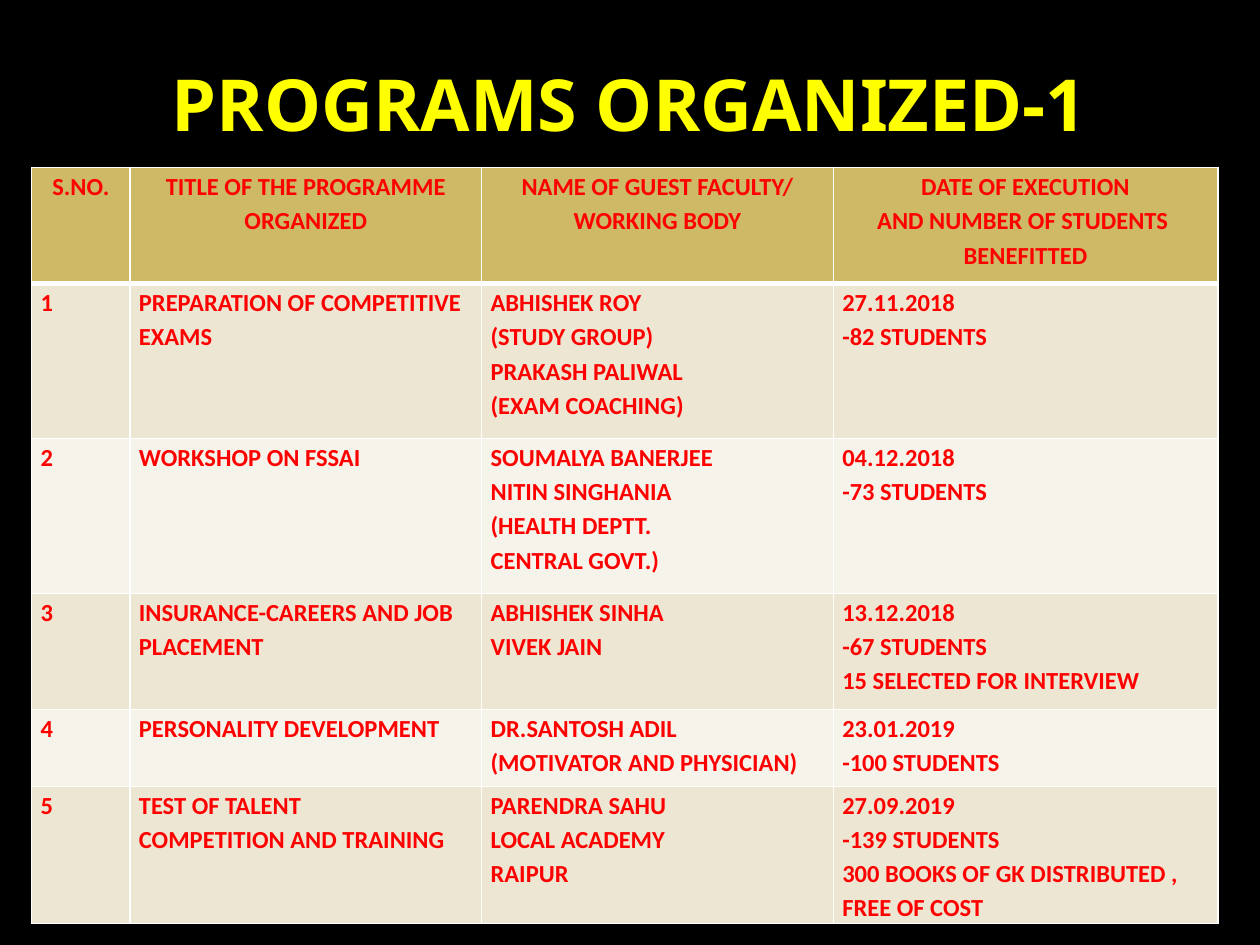
from dataclasses import dataclass

from lxml import etree
from pptx import Presentation, util as u
from pptx.dml.color import RGBColor
from pptx.enum import text
from pptx.oxml import ns

TITLE = "PROGRAMS ORGANIZED-1"
HEADINGS = (
    "S.NO.",
    "TITLE OF THE PROGRAMME ORGANIZED",
    "NAME OF GUEST FACULTY/\nWORKING BODY",
    "DATE OF EXECUTION\nAND NUMBER OF STUDENTS \nBENEFITTED",
)
PROGRAMS = [
    ("PREPARATION OF COMPETITIVE EXAMS",
     "ABHISHEK ROY\n(STUDY GROUP)\nPRAKASH PALIWAL\n(EXAM COACHING)",
     "27.11.2018\n-82 STUDENTS"),
    ("WORKSHOP ON FSSAI",
     "SOUMALYA BANERJEE\nNITIN SINGHANIA\n(HEALTH DEPTT.\nCENTRAL GOVT.)",
     "04.12.2018\n-73 STUDENTS"),
    ("INSURANCE-CAREERS AND JOB PLACEMENT",
     "ABHISHEK SINHA\nVIVEK JAIN",
     "13.12.2018\n-67 STUDENTS\n15 SELECTED FOR INTERVIEW"),
    ("PERSONALITY DEVELOPMENT",
     "DR.SANTOSH ADIL\n(MOTIVATOR AND PHYSICIAN)",
     "23.01.2019\n-100 STUDENTS"),
    ("TEST OF TALENT\nCOMPETITION AND TRAINING",
     "PARENDRA SAHU\nLOCAL ACADEMY\nRAIPUR",
     "27.09.2019\n-139 STUDENTS\n300 BOOKS OF GK DISTRIBUTED , FREE OF COST"),
]
COLUMN_WIDTHS = (1.98, 7.09, 7.09, 7.75)
ROW_HEIGHTS = (2.34, 3.12, 3.12, 2.34, 1.55, 2.77)


@dataclass(frozen=True)
class Theme:
    background: str = "000000"
    title: str = "FFFF00"
    body: str = "FF0000"
    header: str = "CEB966"
    bands: tuple = ("EDE6D3", "F6F3EA")
    border: str = "FFFFFF"
    title_font: str = "Noto Sans"
    body_font: str = "Calibri"
    title_size: int = 41
    body_size: int = 14
    thin: int = 1
    thick: int = 3


THEME = Theme()


def style(paragraph, font_name, size, color):
    for run in paragraph.runs:
        run.font.name = font_name
        run.font.size = u.Pt(size)
        run.font.bold = True
        run.font.color.rgb = RGBColor.from_string(color)


def add_borders(cell, top, bottom):
    properties = cell._tc.get_or_add_tcPr()
    edges = (("lnL", THEME.thin), ("lnR", THEME.thin), ("lnT", top), ("lnB", bottom))
    for place, (edge, width) in enumerate(edges):
        line = etree.Element(ns.qn(f"a:{edge}"), w=str(u.Pt(width)))
        fill = etree.SubElement(line, ns.qn("a:solidFill"))
        etree.SubElement(fill, ns.qn("a:srgbClr"), val=THEME.border)
        properties.insert(place, line)


def fill_cell(cell, words, row):
    is_header = row == 0
    color = THEME.header if is_header else THEME.bands[(row - 1) % 2]
    cell.fill.solid()
    cell.fill.fore_color.rgb = RGBColor.from_string(color)
    cell.margin_left = cell.margin_right = u.Cm(0.18)
    cell.margin_top = cell.margin_bottom = 0
    cell.text_frame.text = words
    for paragraph in cell.text_frame.paragraphs:
        paragraph.line_spacing = 1.15
        paragraph.alignment = text.PP_ALIGN.CENTER if is_header else text.PP_ALIGN.LEFT
        style(paragraph, THEME.body_font, THEME.body_size, THEME.body)
    add_borders(cell,
                THEME.thick if row == 1 else THEME.thin,
                THEME.thick if is_header else THEME.thin)


def add_title(slide):
    title = slide.shapes.add_textbox(u.Cm(1.27), u.Cm(0.76), u.Cm(22.86), u.Cm(2.62))
    frame = title.text_frame
    frame.word_wrap = True
    frame.vertical_anchor = text.MSO_ANCHOR.MIDDLE
    frame.text = TITLE
    heading = frame.paragraphs[0]
    heading.alignment = text.PP_ALIGN.CENTER
    style(heading, THEME.title_font, THEME.title_size, THEME.title)


def add_programs(slide):
    rows = [HEADINGS] + [(str(n), *program) for n, program in enumerate(PROGRAMS, 1)]
    programs = slide.shapes.add_table(
        len(rows), len(HEADINGS), u.Cm(0.64), u.Cm(3.38),
        u.Cm(sum(COLUMN_WIDTHS)), u.Cm(sum(ROW_HEIGHTS))).table
    for column, width in zip(programs.columns, COLUMN_WIDTHS):
        column.width = u.Cm(width)
    for row, height in zip(programs.rows, ROW_HEIGHTS):
        row.height = u.Cm(height)
    for r, entries in enumerate(rows):
        for c, words in enumerate(entries):
            fill_cell(programs.cell(r, c), words, r)


def main():
    deck = Presentation()
    deck.slide_width, deck.slide_height = u.Cm(25.4), u.Cm(19.05)
    slide = deck.slides.add_slide(deck.slide_layouts[6])
    slide.background.fill.solid()
    slide.background.fill.fore_color.rgb = RGBColor.from_string(THEME.background)
    add_title(slide)
    add_programs(slide)
    deck.save("out.pptx")


if __name__ == "__main__":
    main()
